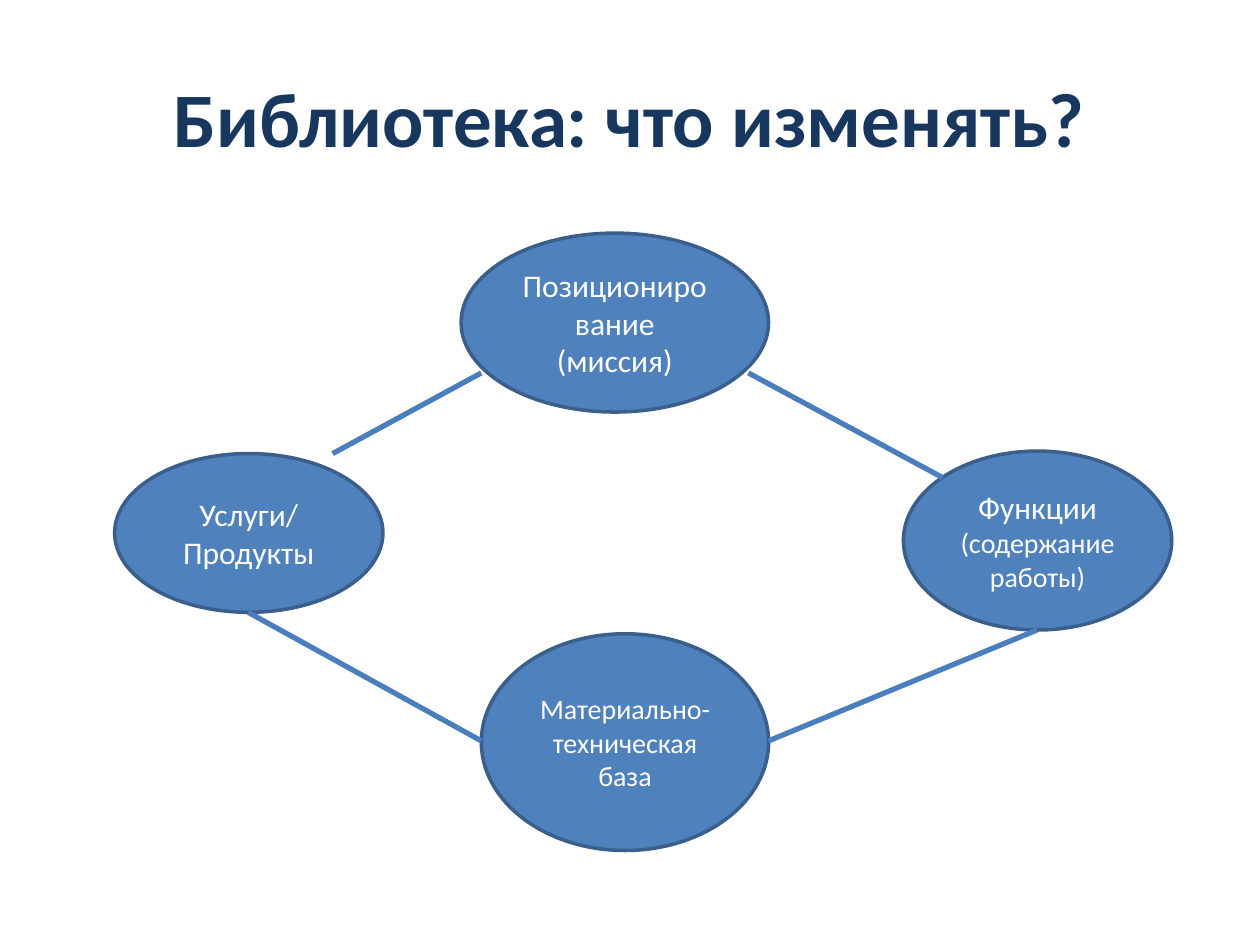
"""Build the slide on what to change in a library: four linked ovals."""
from dataclasses import dataclass

from lxml import etree
from pptx import Presentation
from pptx.dml.color import RGBColor
from pptx.enum.shapes import MSO_CONNECTOR, MSO_SHAPE
from pptx.enum.text import MSO_ANCHOR, PP_ALIGN
from pptx.oxml.ns import qn
from pptx.util import Inches, Pt


@dataclass(frozen=True)
class Theme:
    font: str = "Calibri"
    heading: RGBColor = RGBColor(0x17, 0x37, 0x5E)
    oval: RGBColor = RGBColor(0x4F, 0x81, 0xBD)
    outline: RGBColor = RGBColor(0x3A, 0x5F, 0x8C)
    link: RGBColor = RGBColor(0x4B, 0x7E, 0xBC)
    label: RGBColor = RGBColor(0xFF, 0xFF, 0xFF)
    heading_size: int = 44
    large: int = 18
    small: int = 16


theme = Theme()


def style_run(run, size, color, bold=False):
    run.font.name = theme.font
    run.font.size = Pt(size)
    run.font.color.rgb = color
    run.font.bold = bold


deck = Presentation()
deck.slide_width, deck.slide_height = Inches(10), Inches(7.5)
slide = deck.slides.add_slide(deck.slide_layouts[5])

heading = slide.shapes.title
heading.left, heading.top = Inches(0.5), Inches(0.3)
heading.width, heading.height = Inches(9), Inches(1.25)
heading.text_frame.text = "Библиотека: что изменять?"
heading.text_frame.vertical_anchor = MSO_ANCHOR.MIDDLE
heading.text_frame.paragraphs[0].alignment = PP_ALIGN.CENTER
style_run(heading.text_frame.paragraphs[0].runs[0], theme.heading_size, theme.heading, bold=True)

aspects = [
    ((3.66, 1.85, 2.44, 1.42),
     [[("Позиционирование", theme.large)], [("(миссия)", theme.large)]]),
    ((0.91, 3.6, 2.13, 1.26), [[("Услуги/Продукты", theme.large)]]),
    ((7.17, 3.58, 2.13, 1.42),
     [[("Функции ", theme.large), ("(содержание работы)", theme.small)]]),
    ((3.82, 5.03, 2.28, 1.72), [[("Материально-техническая база", theme.small)]]),
]
for box, lines in aspects:
    oval = slide.shapes.add_shape(MSO_SHAPE.OVAL, *map(Inches, box))
    oval.shadow.inherit = False
    oval.fill.solid()
    oval.fill.fore_color.rgb = theme.oval
    oval.line.color.rgb = theme.outline
    oval.line.width = Pt(2)
    label = oval.text_frame
    label.word_wrap = True
    label.vertical_anchor = MSO_ANCHOR.MIDDLE
    for index, parts in enumerate(lines):
        paragraph = label.add_paragraph() if index else label.paragraphs[0]
        paragraph.alignment = PP_ALIGN.CENTER
        for wording, size in parts:
            run = paragraph.add_run()
            run.text = wording
            style_run(run, size, theme.label)

links = [
    (3.82, 2.96, 2.64, 3.6),
    (1.97, 4.86, 3.82, 5.88),
    (5.94, 2.96, 7.48, 3.79),
    (8.23, 5, 6.1, 5.88),
]
for ends in links:
    link = slide.shapes.add_connector(MSO_CONNECTOR.STRAIGHT, *map(Inches, ends))
    link.line.color.rgb = theme.link
    link.line.width = Pt(3)
    etree.SubElement(link._element.spPr, qn("a:effectLst"))

deck.save("out.pptx")
